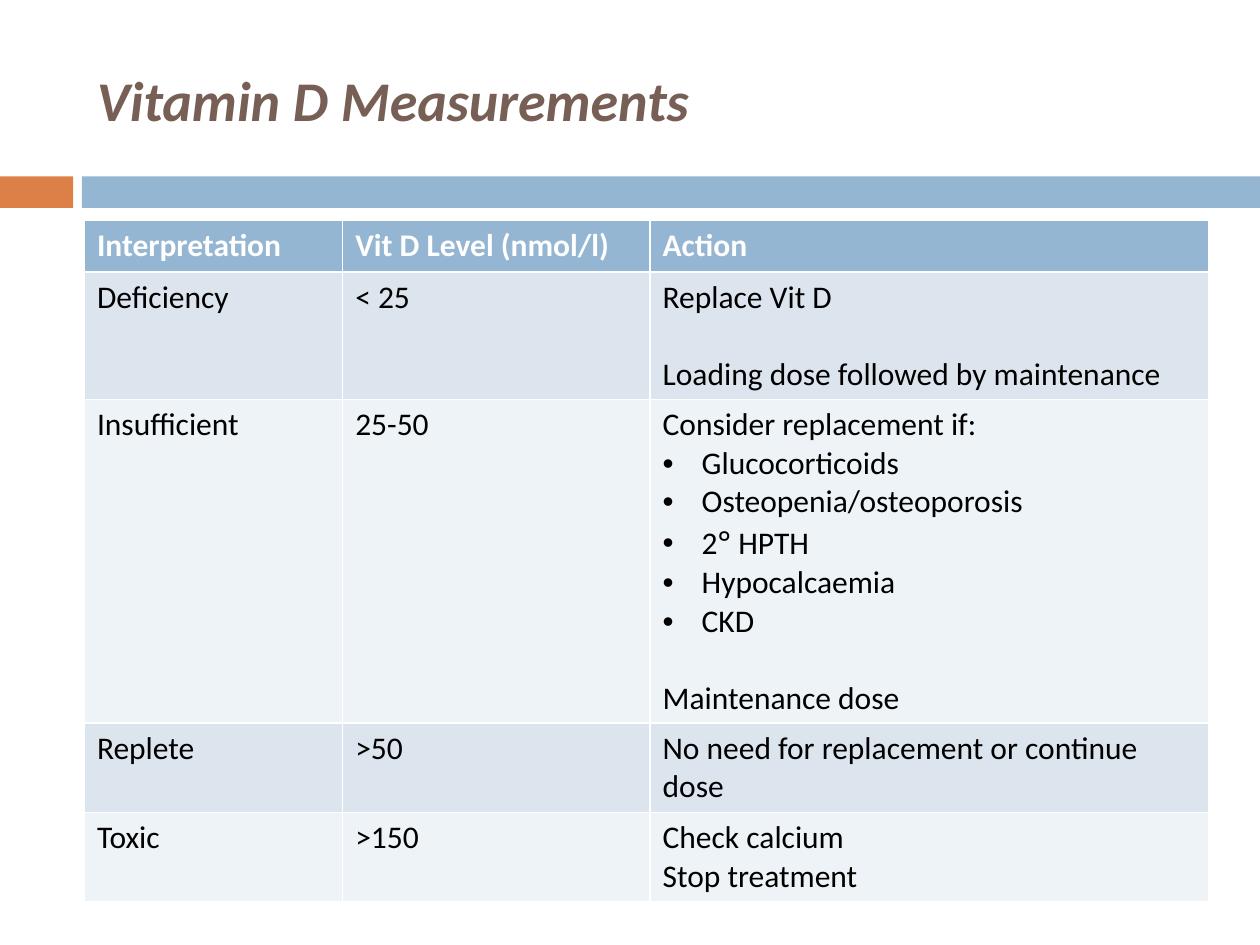
from lxml.etree import SubElement
from pptx import Presentation
from pptx.dml.color import RGBColor
from pptx.enum.shapes import MSO_SHAPE
from pptx.enum.text import MSO_ANCHOR
from pptx.oxml.ns import qn
from pptx.util import Inches, Pt

WHITE = RGBColor(0xFF, 0xFF, 0xFF)
BLACK = RGBColor(0, 0, 0)
BROWN = RGBColor(0x77, 0x5F, 0x55)
ORANGE = RGBColor(0xDD, 0x80, 0x47)
BLUE = RGBColor(0x94, 0xB6, 0xD2)
BANDS = [RGBColor(0xEE, 0xF3, 0xF7), RGBColor(0xDC, 0xE5, 0xEE)]
FONT = "Calibri"
SIGNS = "Noto Sans"
BULLET = "•"
GAP = "^"

COLS = [2.05, 2.44, 4.43]
ROWS = [
    (0.41, ["Interpretation"], ["Vit D Level (nmol/l)"], ["Action"]),
    (1.01, ["Deficiency"], ["< 25"],
     ["Replace Vit D", GAP + "Loading dose followed by maintenance"]),
    (2.57, ["Insufficient"], ["25-50"],
     ["Consider replacement if:", "•Glucocorticoids",
      "•Osteopenia/osteoporosis", "•2° HPTH", "•Hypocalcaemia", "•CKD",
      GAP + "Maintenance dose"]),
    (0.71, ["Replete"], [">50"], ["No need for replacement or continue dose"]),
    (0.71, ["Toxic"], [">150"], ["Check calcium", "Stop treatment"]),
]


def style(para, size, color, bold, slant=False):
    """Set the font of a whole paragraph."""
    font = para.font
    font.name, font.size = FONT, Pt(size)
    font.bold, font.italic = bold, slant
    font.color.rgb = color


def add_title(slide, left, top, width, height):
    """Place the slide title in the given box."""
    frame = slide.shapes.add_textbox(
        Inches(left), Inches(top), Inches(width), Inches(height)).text_frame
    frame.word_wrap = True
    frame.vertical_anchor = MSO_ANCHOR.MIDDLE
    para = frame.paragraphs[0]
    para.text = "Vitamin D Measurements"
    style(para, 32, BROWN, True, True)


def add_band(slide, left, top, width, height):
    """Place the orange block and the blue bar beside it."""
    block, start = 0.58, 0.65
    for x, wide, color in ((left, block, ORANGE),
                           (left + start, width - start, BLUE)):
        bar = slide.shapes.add_shape(
            MSO_SHAPE.RECTANGLE, Inches(x), Inches(top), Inches(wide), Inches(height))
        bar.shadow.inherit = False
        bar.fill.solid()
        bar.fill.fore_color.rgb = color
        bar.line.fill.background()


def add_bullet(para):
    """Give a paragraph a hanging bullet."""
    props = para._p.get_or_add_pPr()
    props.set("marL", str(Inches(0.31)))
    props.set("indent", str(-Inches(0.31)))
    SubElement(props, qn("a:buFont")).set("typeface", "Arial")
    SubElement(props, qn("a:buChar")).set("char", BULLET)


def fill_line(para, line, color, bold):
    """Write one line of a cell, with its bullet or gap above."""
    style(para, 18, color, bold)
    if line.startswith(GAP):
        para.space_before = Pt(22)
    if line.startswith(BULLET):
        add_bullet(para)
    head, sign, tail = line.lstrip(GAP + BULLET).partition("°")
    for text, face in ((head, FONT), (sign, SIGNS), (tail, FONT)):
        if text:
            run = para.add_run()
            run.text = text
            if face != FONT:
                run.font.name = face


def add_levels(slide, left, top, width, height):
    """Place the table of vitamin D levels and actions."""
    table = slide.shapes.add_table(
        len(ROWS), len(COLS), Inches(left), Inches(top),
        Inches(width), Inches(height)).table
    for col, wide in zip(table.columns, COLS):
        col.width = Inches(wide)
    for r, (high, *cells) in enumerate(ROWS):
        table.rows[r].height = Inches(high)
        first = r == 0
        for c, lines in enumerate(cells):
            cell = table.cell(r, c)
            cell.fill.solid()
            cell.fill.fore_color.rgb = BLUE if first else BANDS[r % 2]
            frame = cell.text_frame
            for i, line in enumerate(lines):
                para = frame.add_paragraph() if i else frame.paragraphs[0]
                fill_line(para, line, WHITE if first else BLACK, first)


def main():
    """Build and save the slide."""
    deck = Presentation()
    deck.slide_width, deck.slide_height = Inches(10), Inches(7.5)
    slide = deck.slides.add_slide(deck.slide_layouts[6])
    add_band(slide, 0, 1.4, 10, 0.25)
    add_title(slide, 0.67, 0.25, 8.92, 1.08)
    add_levels(slide, 0.67, 1.75, sum(COLS), sum(row[0] for row in ROWS))
    deck.save("out.pptx")


if __name__ == "__main__":
    main()
